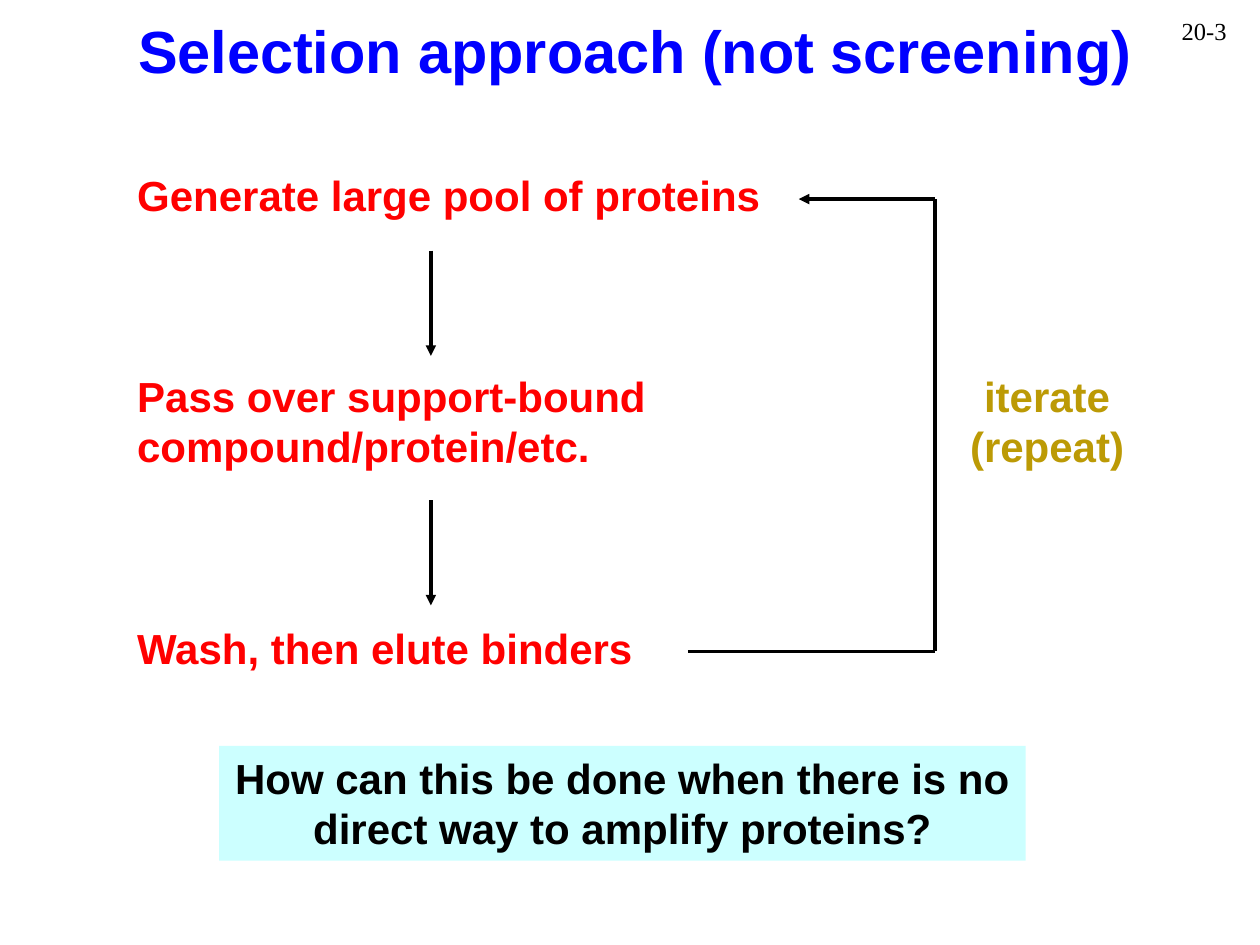
from lxml import etree
from pptx import Presentation
from pptx import util as u
from pptx.dml.color import RGBColor
from pptx.enum import shapes, text
from pptx.oxml.ns import qn

COLS, ROWS = 100, 75  # grid cells of a tenth of an inch


def colour(hex_string):
    return RGBColor.from_string(hex_string)


class SlideBuilder:
    """Holds the style and the current slide; lengths are in grid cells."""

    BODY = {"size": u.Pt(24), "name": "Arial", "bold": True}
    TITLE = {**BODY, "size": u.Pt(34)}
    NUMBER = {"size": u.Pt(14), "name": "Times New Roman", "bold": False}
    LINE_FACTOR = 1.2  # line pitch as a share of the font size
    LINE_WIDTH = u.Pt(2)
    BLACK = "000000"

    def __init__(self, prs):
        self.cell_w = prs.slide_width / COLS
        self.cell_h = prs.slide_height / ROWS
        self.slide = prs.slides.add_slide(prs.slide_layouts[6])

    def x(self, cols):
        return u.Emu(round(cols * self.cell_w))

    def y(self, rows):
        return u.Emu(round(rows * self.cell_h))

    def fill_text(self, shape, lines, font_colour, style, centred):
        frame = shape.text_frame
        frame_format = {"word_wrap": False, "vertical_anchor": text.MSO_ANCHOR.TOP}
        for key, value in frame_format.items():
            setattr(frame, key, value)
        frame.text = "\n".join(lines)
        for paragraph in frame.paragraphs:
            paragraph.alignment = text.PP_ALIGN.CENTER if centred else text.PP_ALIGN.LEFT
            paragraph.line_spacing = u.Pt(style["size"].pt * self.LINE_FACTOR)
            font = paragraph.runs[0].font
            for key, value in style.items():
                setattr(font, key, value)
            font.color.rgb = colour(font_colour)

    def label(self, box, lines, font_colour, style=BODY, centred=False):
        left, top, width, height = box
        shape = self.slide.shapes.add_textbox(
            self.x(left), self.y(top), self.x(width), self.y(height))
        self.fill_text(shape, lines, font_colour, style, centred)

    def panel(self, box, lines, fill):
        left, top, width, height = box
        shape = self.slide.shapes.add_shape(
            shapes.MSO_SHAPE.RECTANGLE,
            self.x(left), self.y(top), self.x(width), self.y(height))
        shape.shadow.inherit = False
        shape.fill.solid()
        shape.fill.fore_color.rgb = colour(fill)
        shape.line.fill.background()
        self.fill_text(shape, lines, self.BLACK, self.BODY, centred=True)

    def line(self, start, end, arrow=False):
        connector = self.slide.shapes.add_connector(
            shapes.MSO_CONNECTOR.STRAIGHT,
            self.x(start[0]), self.y(start[1]), self.x(end[0]), self.y(end[1]))
        connector.line.width = self.LINE_WIDTH
        connector.line.color.rgb = colour(self.BLACK)
        properties = connector._element.spPr
        if arrow:
            etree.SubElement(properties.find(qn("a:ln")), qn("a:tailEnd"), type="triangle")
        etree.SubElement(properties, qn("a:effectLst"))


def main():
    prs = Presentation()
    prs.slide_width, prs.slide_height = u.Inches(10), u.Inches(7.5)
    page = SlideBuilder(prs)

    # Heading and page number
    page.label((92.8, 0.8, 6.9, 3.3), ["20-3"], page.BLACK, page.NUMBER)
    page.label((9.6, 0.6, 81.6, 6.7), ["Selection approach (not screening)"],
               "0000FF", page.TITLE, centred=True)

    # Steps of the selection
    steps = [
        (13, 51.9, 5, ["Generate large pool of proteins"]),
        (28.9, 42.8, 9.1, ["Pass over support-bound", "compound/protein/etc."]),
        (48.9, 41.7, 5.1, ["Wash, then elute binders"]),
    ]
    for top, width, height, lines in steps:
        page.label((9.9, top, width, height), lines, "FF0000")

    # Arrows from each step to the next
    step_axis, arrow_length = 34.2, 8.35
    for arrow_top in (19.9, 39.7):
        page.line((step_axis, arrow_top), (step_axis, arrow_top + arrow_length), arrow=True)

    # Loop from the last step back to the first
    loop_x, loop_top, loop_bottom = 74.2, 15.8, 51.7
    page.line((54.6, loop_bottom), (loop_x, loop_bottom))
    page.line((loop_x, loop_bottom), (loop_x, loop_top))
    page.line((loop_x, loop_top), (63.4, loop_top), arrow=True)
    page.label((75.9, 28.9, 14.4, 9.1), ["iterate", "(repeat)"], "BC9A05", centred=True)

    # Closing question
    page.panel((17.4, 59.2, 64, 9.1),
               ["How can this be done when there is no", "direct way to amplify proteins?"],
               "CCFFFF")

    prs.save("out.pptx")


if __name__ == "__main__":
    main()
